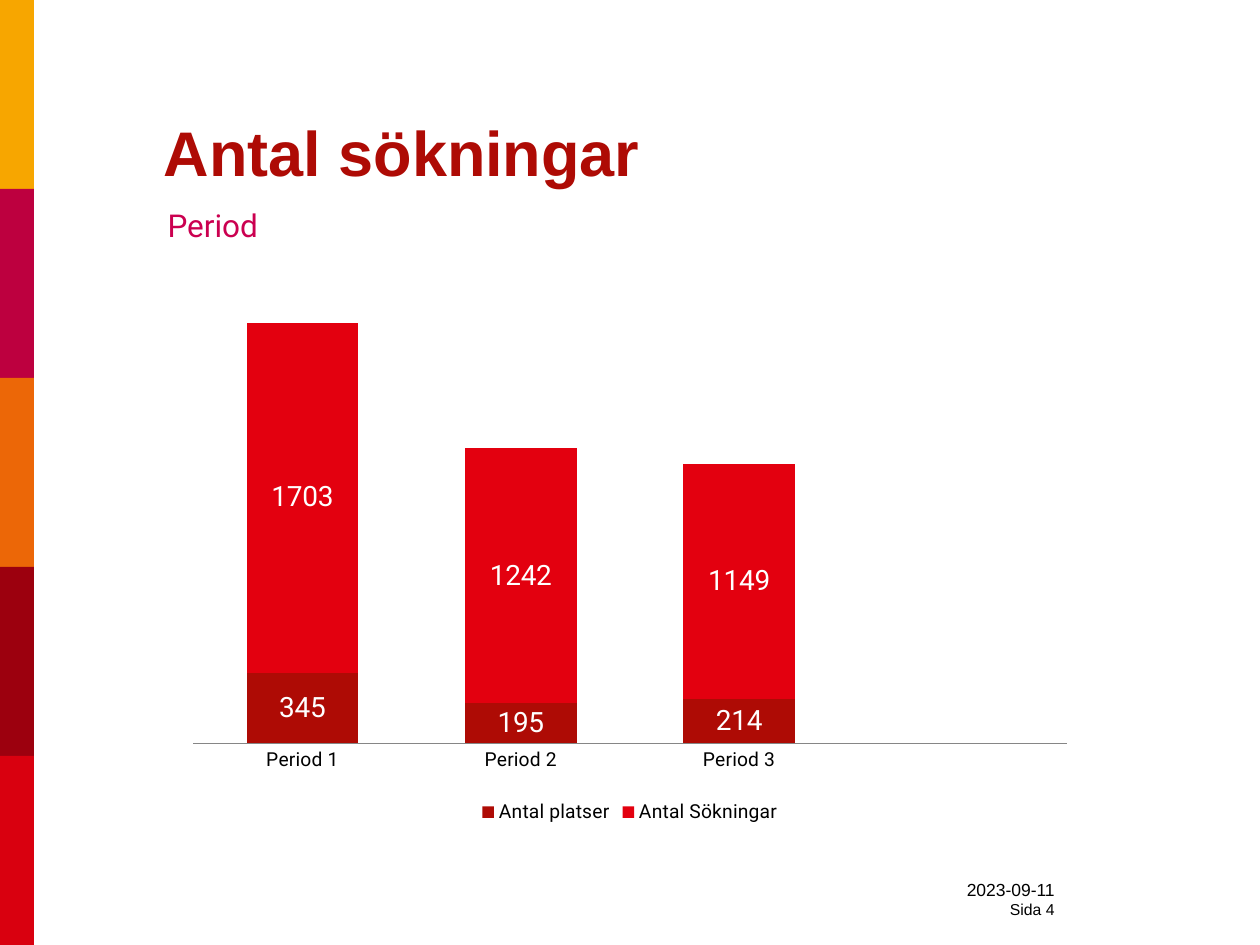
"""Build the search count slide with a stacked column chart."""
import dataclasses
import typing

import pptx
import pptx.chart.data
import pptx.dml.color
import pptx.enum.chart
import pptx.enum.shapes
import pptx.enum.text
import pptx.oxml
import pptx.oxml.ns
import pptx.util

Inches = pptx.util.Inches
Box = tuple[float, float, float, float]


@dataclasses.dataclass(frozen=True)
class Theme:
    head: str = "Arial"
    body: str = "Roboto"
    title: str = "AE0B05"
    sub: str = "CB0050"
    ink: str = "000000"
    light: str = "FFFFFF"
    rule: str = "868686"
    bands: tuple[str, ...] = ("F7A600", "BD003F", "EC6707", "9C000E", "D9000F")
    big: int = 36
    mid: int = 18
    label: int = 16
    small: int = 11
    date: int = 10
    page: int = 9


@dataclasses.dataclass(frozen=True)
class Series:
    name: str
    vals: tuple[int | None, ...]
    fill: str


THEME = Theme()
CATS = ("Period 1", "Period 2", "Period 3", "")
SERIES = (
    Series("Antal platser", (345, 195, 214, None), "AE0B05"),
    Series("Antal Sökningar", (1703, 1242, 1149, None), "E3000F"),
)
PLOT = {"x": 0.02, "y": 0.02, "w": 0.96, "h": 0.84}


def color(code: str) -> pptx.dml.color.RGBColor:
    return pptx.dml.color.RGBColor.from_string(code)


def apply(item: typing.Any, **form: typing.Any) -> None:
    for key, val in form.items():
        setattr(item, key, val)


def style(font: typing.Any, name: str, size: int, tint: str, bold: bool = False) -> None:
    apply(font, name=name, size=pptx.util.Pt(size), bold=bold)
    font.color.rgb = color(tint)


def place(box: Box) -> list[int]:
    return [Inches(val) for val in box]


def band(slide: typing.Any, box: Box, fill: str) -> None:
    kind = pptx.enum.shapes.MSO_SHAPE.RECTANGLE
    shape = slide.shapes.add_shape(kind, *place(box))
    shape.shadow.inherit = False
    shape.fill.solid()
    shape.fill.fore_color.rgb = color(fill)
    shape.line.fill.background()


def title(slide: typing.Any, text: str, box: Box) -> None:
    shape = slide.shapes.title
    apply(shape, **dict(zip(("left", "top", "width", "height"), place(box))))
    frame = shape.text_frame
    frame.text = text
    apply(frame, vertical_anchor=pptx.enum.text.MSO_ANCHOR.BOTTOM, word_wrap=True,
          auto_size=pptx.enum.text.MSO_AUTO_SIZE.NONE)
    para = frame.paragraphs[0]
    para.alignment = pptx.enum.text.PP_ALIGN.LEFT
    style(para.font, THEME.head, THEME.big, THEME.title, True)


def footer(slide: typing.Any, lines: dict[str, int], box: Box) -> None:
    frame = slide.shapes.add_textbox(*place(box)).text_frame
    apply(frame, text="\n".join(lines), word_wrap=True, margin_left=0, margin_right=0,
          vertical_anchor=pptx.enum.text.MSO_ANCHOR.MIDDLE)
    for para, size in zip(frame.paragraphs, lines.values()):
        para.alignment = pptx.enum.text.PP_ALIGN.RIGHT
        style(para.font, THEME.head, size, THEME.ink)


def table(slide: typing.Any, text: str, box: Box) -> None:
    grid = slide.shapes.add_table(1, 1, *place(box)).table
    apply(grid, first_row=False, horz_banding=False)
    cell = grid.cell(0, 0)
    apply(cell, text=text, margin_left=0, margin_top=0, margin_right=0, margin_bottom=0)
    cell.fill.background()
    style(cell.text_frame.paragraphs[0].font, THEME.body, THEME.mid, THEME.sub)


def layout(chart: typing.Any) -> None:
    area = chart.plots[0]._element.getparent()
    for old in area.findall(pptx.oxml.ns.qn("c:layout")):
        area.remove(old)
    modes = "".join(f'<c:{key}Mode val="edge"/>' for key in "xy")
    sizes = "".join(f'<c:{key} val="{val}"/>' for key, val in PLOT.items())
    area.insert(0, pptx.oxml.parse_xml(
        f'<c:layout {pptx.oxml.ns.nsdecls("c")}><c:manualLayout>'
        f'<c:layoutTarget val="inner"/>{modes}{sizes}</c:manualLayout></c:layout>'))


def graph(slide: typing.Any, box: Box) -> None:
    enum = pptx.enum.chart
    data = pptx.chart.data.CategoryChartData()
    data.categories = CATS
    for item in SERIES:
        data.add_series(item.name, item.vals)
    kind = enum.XL_CHART_TYPE.COLUMN_STACKED
    chart = slide.shapes.add_chart(kind, *place(box), data).chart
    apply(chart, has_title=False, has_legend=True)
    style(chart.font, "Calibri", THEME.mid, THEME.ink)
    layout(chart)
    apply(chart.legend, position=enum.XL_LEGEND_POSITION.BOTTOM, include_in_layout=False)
    style(chart.legend.font, THEME.body, THEME.small, THEME.ink)
    apply(chart.value_axis, visible=False, has_major_gridlines=False,
          minimum_scale=0, maximum_scale=2500)
    axis = chart.category_axis
    apply(axis, major_tick_mark=enum.XL_TICK_MARK.NONE)
    style(axis.tick_labels.font, THEME.body, THEME.small, THEME.ink)
    axis.format.line.color.rgb = color(THEME.rule)
    axis.format.line.width = pptx.util.Pt(0.75)
    plot = chart.plots[0]
    apply(plot, gap_width=95, overlap=100, vary_by_categories=False)
    for item, bar in zip(SERIES, plot.series):
        bar.format.fill.solid()
        bar.format.fill.fore_color.rgb = color(item.fill)
        apply(bar.data_labels, show_value=True, position=enum.XL_LABEL_POSITION.CENTER)
        style(bar.data_labels.font, THEME.body, THEME.label, THEME.light)


def main() -> None:
    deck = pptx.Presentation()
    apply(deck, slide_width=Inches(10), slide_height=Inches(7.5))
    slide = deck.slides.add_slide(deck.slide_layouts[5])
    step = 7.5 / len(THEME.bands)
    for row, fill in enumerate(THEME.bands):
        band(slide, (0, row * step, 0.27, step), fill)
    title(slide, "Antal sökningar", (1.2, 0.3, 8.65, 1.25))
    table(slide, "Period", (1.33, 1.65, 7.3, 0.7))
    graph(slide, (1.39, 1.73, 7.22, 4.85))
    footer(slide, {"2023-09-11": THEME.date, "Sida 4": THEME.page}, (7.33, 6.95, 1.04, 0.37))
    deck.save("out.pptx")


if __name__ == "__main__":
    main()
